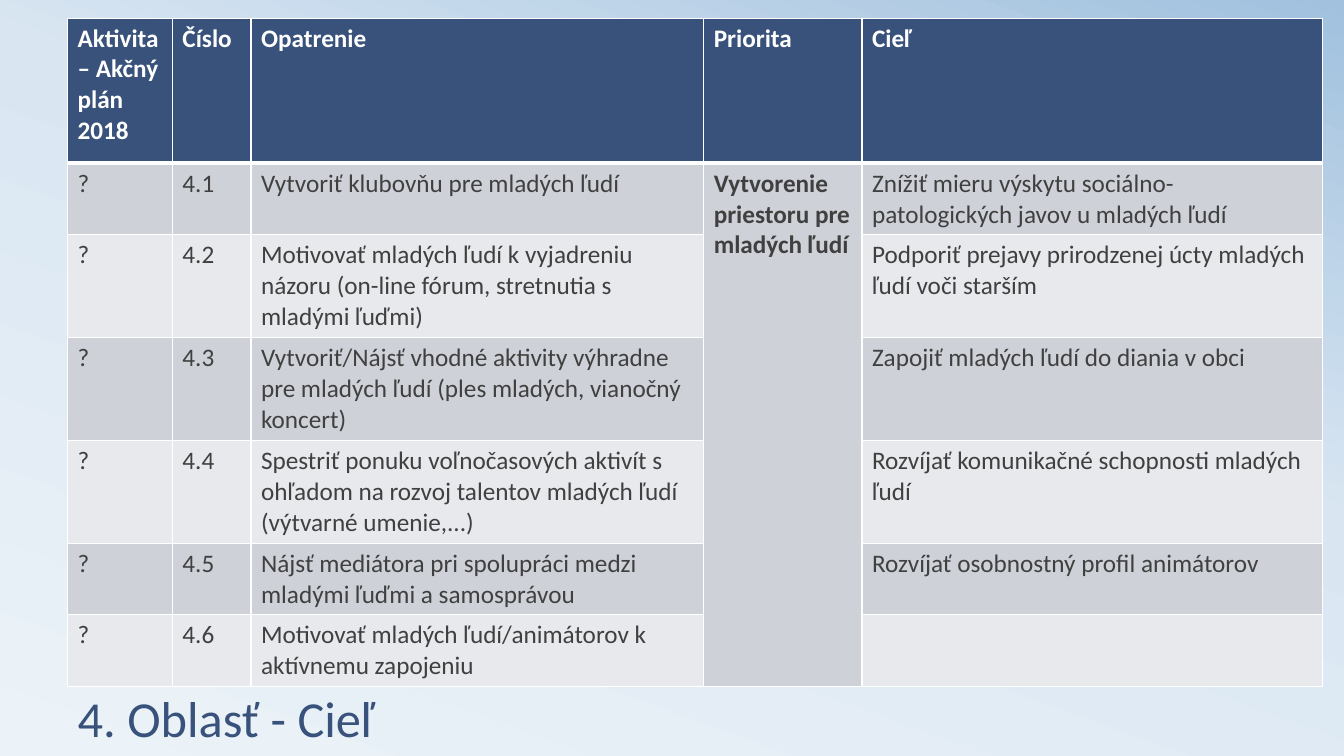
from copy import deepcopy

from lxml import etree
from pptx import Presentation
from pptx.dml import color
from pptx.enum import text
from pptx.oxml import ns
from pptx.util import Inches, Pt

NAVY, WHITE, GREY = "39527B", "FFFFFF", "404040"
BANDS = ["CED1D7", "E8E9EC"]
BACKGROUND = [(0, "ECF3F8"), (0.58, "D9E6F2"), (1, "A1C1DE")]
COLUMN_WIDTHS = [1.04, 0.78, 4.49, 1.57, 4.57]
ROW_HEIGHTS = [1.44, 0.71, 1.02, 1.02, 1.02, 0.71, 0.71]
PRIORITY_COLUMN = 3
HEADINGS = ["Aktivita – Akčný plán 2018", "Číslo", "Opatrenie", "Priorita", "Cieľ"]
PRIORITY = "Vytvorenie priestoru pre mladých ľudí"
MEASURES = [
    ("Vytvoriť klubovňu pre mladých ľudí",
     "Znížiť mieru výskytu sociálno-patologických javov u mladých ľudí"),
    ("Motivovať mladých ľudí k vyjadreniu názoru (on-line fórum, stretnutia s mladými ľuďmi)",
     "Podporiť prejavy prirodzenej úcty mladých ľudí voči starším"),
    ("Vytvoriť/Nájsť vhodné aktivity výhradne pre mladých ľudí (ples mladých, vianočný koncert)",
     "Zapojiť mladých ľudí do diania v obci"),
    ("Spestriť ponuku voľnočasových aktivít s ohľadom na rozvoj talentov mladých ľudí "
     "(výtvarné umenie,...)",
     "Rozvíjať komunikačné schopnosti mladých ľudí"),
    ("Nájsť mediátora pri spolupráci medzi mladými ľuďmi a samosprávou",
     "Rozvíjať osobnostný profil animátorov"),
    ("Motivovať mladých ľudí/animátorov k aktívnemu zapojeniu", ""),
]


def rgb(value):
    return color.RGBColor.from_string(value)


def write(frame, words, size=18, ink=GREY, bold=False, spacing=None):
    para = frame.paragraphs[0]
    para.alignment = text.PP_ALIGN.LEFT
    para.line_spacing = spacing
    para.font.size = Pt(size)
    if words:
        span = para.add_run()
        span.text = words
        span.font.name = "Calibri"
        span.font.size = Pt(size)
        span.font.bold = bold
        span.font.color.rgb = rgb(ink)


def paint_background(page):
    fill = page.background.fill
    fill.gradient()
    fill.gradient_angle = 70
    first = next(page.element.iter(ns.qn("a:gs")))
    first.addnext(deepcopy(first))
    for stop, (position, shade) in zip(fill.gradient_stops, BACKGROUND):
        stop.position = position
        stop.color.rgb = rgb(shade)


def add_title(page, words):
    title = page.shapes.title
    title.left, title.top = Inches(0.67), Inches(6.29)
    title.width, title.height = Inches(12), Inches(1.17)
    title.text_frame.vertical_anchor = text.MSO_ANCHOR.BOTTOM
    write(title.text_frame, words, size=36, ink=NAVY, spacing=0.8)


def border(cell, **widths):
    """Draw white cell edges; widths in points are keyed by side: L, R, T, B."""
    properties = cell._tc.get_or_add_tcPr()
    for side, width in widths.items():
        line = etree.SubElement(properties, ns.qn(f"a:ln{side}"), w=str(Pt(width)))
        solid = etree.SubElement(line, ns.qn("a:solidFill"))
        etree.SubElement(solid, ns.qn("a:srgbClr"), val=WHITE)


def fill_cell(cell, words, row, column):
    header = row == 0
    border(cell, L=1, R=1, T=3 if row == 1 else 1, B=3 if header else 1)
    cell.fill.solid()
    band = 0 if column == PRIORITY_COLUMN else (row - 1) % 2
    cell.fill.fore_color.rgb = rgb(NAVY if header else BANDS[band])
    write(cell.text_frame, words, ink=WHITE if header else GREY,
          bold=header or column == PRIORITY_COLUMN)


def add_measures_table(page):
    rows = [HEADINGS]
    for number, (measure, goal) in enumerate(MEASURES, 1):
        rows.append(["?", f"4.{number}", measure, PRIORITY if number == 1 else "", goal])
    table = page.shapes.add_table(
        len(rows), len(HEADINGS), Inches(0.67), Inches(0.18),
        Inches(sum(COLUMN_WIDTHS)), Inches(sum(ROW_HEIGHTS))).table
    for column, width in zip(table.columns, COLUMN_WIDTHS):
        column.width = Inches(width)
    for row, height in zip(table.rows, ROW_HEIGHTS):
        row.height = Inches(height)
    for row, entries in enumerate(rows):
        for column, words in enumerate(entries):
            fill_cell(table.cell(row, column), words, row, column)
    table.cell(1, PRIORITY_COLUMN).merge(table.cell(len(MEASURES), PRIORITY_COLUMN))


def main():
    deck = Presentation()
    deck.slide_width, deck.slide_height = Inches(13.33), Inches(7.5)
    page = deck.slides.add_slide(deck.slide_layouts[5])
    paint_background(page)
    add_title(page, "4. Oblasť - Cieľ")
    add_measures_table(page)
    deck.save("out.pptx")


if __name__ == "__main__":
    main()
